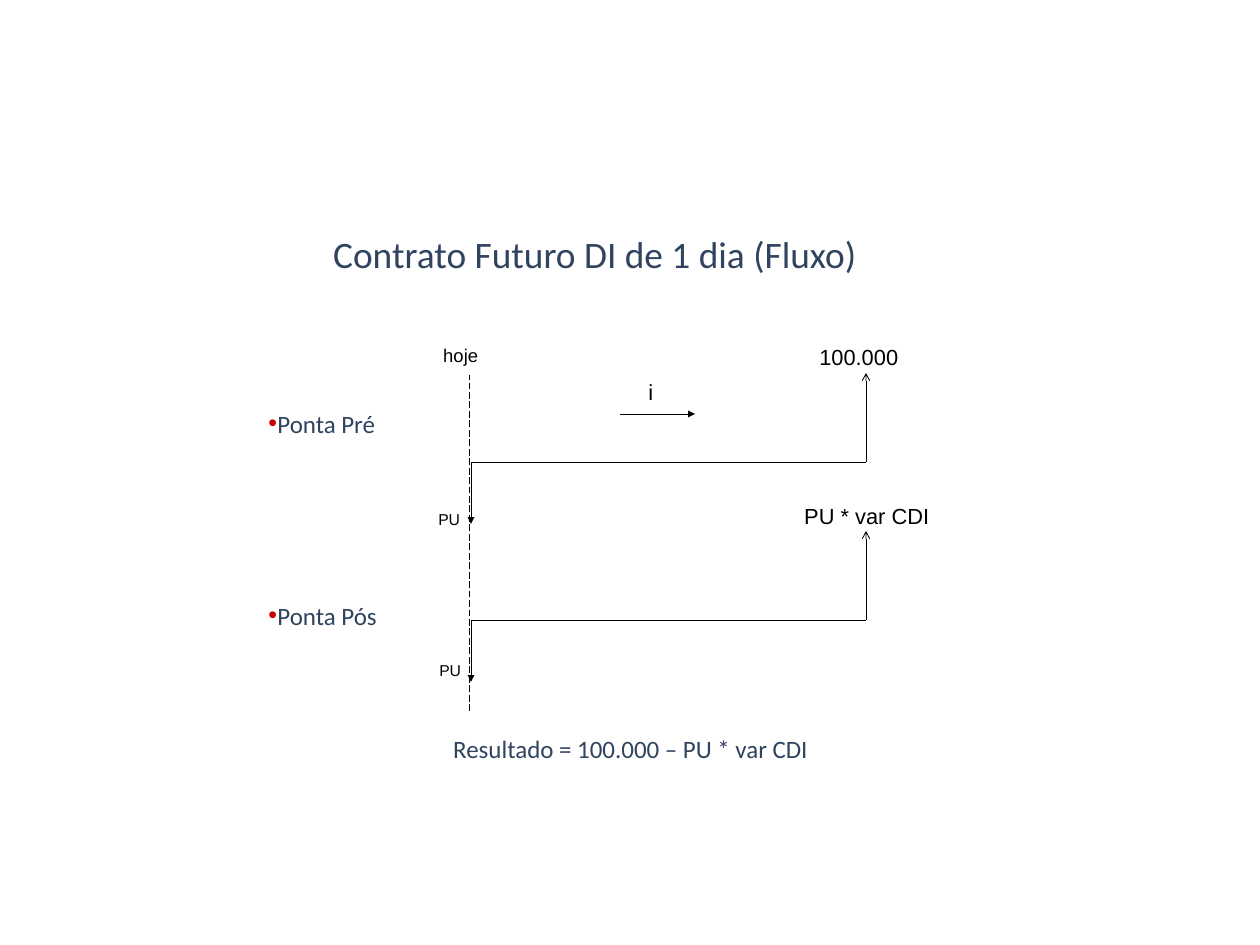
from lxml.etree import SubElement
from pptx import Presentation
from pptx.dml.color import RGBColor
from pptx.enum.dml import MSO_LINE
from pptx.enum.shapes import MSO_CONNECTOR
from pptx.enum.text import MSO_ANCHOR, MSO_AUTO_SIZE, PP_ALIGN
from pptx.oxml.ns import qn
from pptx.util import Pt

BLACK = RGBColor(0x00, 0x00, 0x00)
NAVY = RGBColor(0x30, 0x43, 0x5F)
RED = RGBColor(0xCC, 0x00, 0x00)
SCALE = 914400 / 84


def px(n):
    return round(n * SCALE)


def style(obj, form):
    for key, val in form.items():
        setattr(obj, key, val)


class Board:
    fit = {"word_wrap": False, "auto_size": MSO_AUTO_SIZE.SHAPE_TO_FIT_TEXT}
    fixed = {"word_wrap": True, "auto_size": MSO_AUTO_SIZE.NONE}

    def __init__(self, slide):
        self.slide = slide

    def place(self, shape, box):
        style(shape, dict(zip(("left", "top", "width", "height"), map(px, box))))

    def fill_text(self, para, text, size, face="Arial", color=BLACK):
        para.text = text
        style(para.font, {"name": face, "size": Pt(size), "bold": False})
        para.font.color.rgb = color

    def title(self, text, box):
        shape = self.slide.shapes.title
        self.place(shape, box)
        frame = shape.text_frame
        style(frame, {**self.fixed, "vertical_anchor": MSO_ANCHOR.MIDDLE})
        para = frame.paragraphs[0]
        para.alignment = PP_ALIGN.CENTER
        self.fill_text(para, text, 32, "Calibri", NAVY)

    def bullet(self, slot, text, box):
        shape = self.slide.placeholders[slot]
        self.place(shape, box)
        frame = shape.text_frame
        style(frame, {**self.fixed, "vertical_anchor": MSO_ANCHOR.TOP})
        para = frame.paragraphs[0]
        style(para, {"alignment": PP_ALIGN.LEFT, "line_spacing": 1.4,
                     "space_before": Pt(0), "space_after": Pt(0)})
        props = para._p.get_or_add_pPr()
        props.set("marL", str(px(9)))
        props.set("indent", str(-px(9)))
        tint = SubElement(props, qn("a:buClr"))
        SubElement(tint, qn("a:srgbClr"), val=str(RED))
        SubElement(props, qn("a:buFont"), typeface="Arial")
        SubElement(props, qn("a:buChar"), char="•")
        self.fill_text(para, text, 21.4, "Calibri", NAVY)

    def label(self, text, box, size, face="Arial", color=BLACK):
        shape = self.slide.shapes.add_textbox(*map(px, box))
        frame = shape.text_frame
        style(frame, self.fit)
        self.fill_text(frame.paragraphs[0], text, size, face, color)

    def line(self, start, end, tip=None, dash=None):
        wire = self.slide.shapes.add_connector(
            MSO_CONNECTOR.STRAIGHT, *map(px, start + end))
        wire.line.color.rgb = BLACK
        style(wire.line, {"width": Pt(0.75), "dash_style": dash})
        if tip:
            SubElement(wire.line._get_or_add_ln(), qn("a:tailEnd"), type=tip)
        SubElement(wire._element.spPr, qn("a:effectLst"))

    def flow(self, left, right, base):
        self.line((right, base), (right, base - 89), "arrow")
        self.line((right, base), (left, base))
        self.line((left, base), (left, base + 62), "triangle")


def main():
    deck = Presentation()
    style(deck, {"slide_width": px(1260), "slide_height": px(945)})
    board = Board(deck.slides.add_slide(deck.slide_layouts[3]))

    board.title("Contrato Futuro DI de 1 dia (Fluxo)", (211, 229, 768, 50))
    board.bullet(1, "Ponta Pré", (260, 392, 151, 47))
    board.bullet(2, "Ponta Pós", (260, 584, 153, 47))

    for base in (462, 620):
        board.flow(471, 866, base)
    board.line((469, 711), (469, 375), dash=MSO_LINE.LONG_DASH)
    board.line((620, 414), (695, 414), "triangle")

    for text, box, size in (
        ("hoje", (435, 340, 52, 31), 15.8),
        ("100.000", (811, 340, 97, 35), 18.7),
        ("i", (640, 375, 22, 35), 18.7),
        ("PU", (430, 506, 39, 28), 13.5),
        ("PU * var CDI", (796, 499, 144, 35), 18.7),
        ("PU", (431, 657, 39, 28), 13.5),
    ):
        board.label(text, box, size)
    board.label("Resultado = 100.000 – PU * var CDI", (445, 729, 387, 39),
                21.4, "Calibri", NAVY)
    deck.save("out.pptx")


if __name__ == "__main__":
    main()
